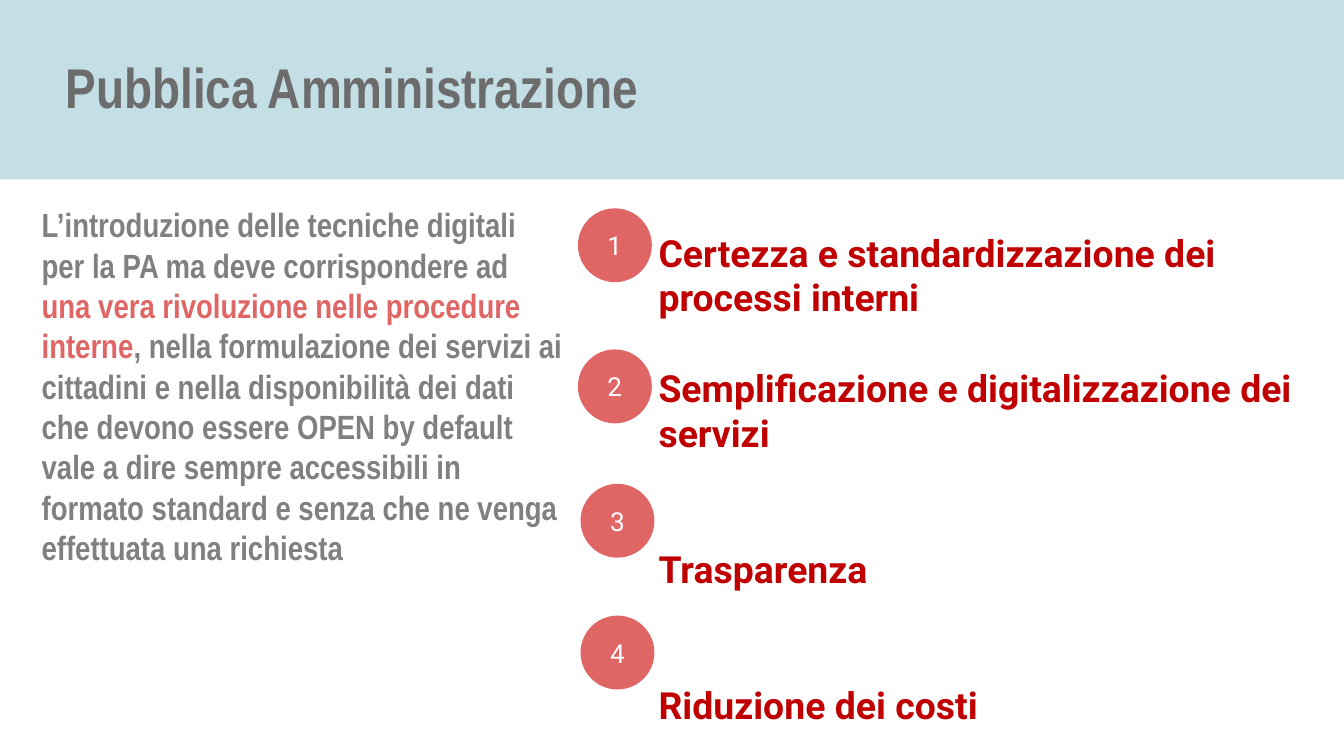
from collections import namedtuple
from dataclasses import dataclass

from lxml import etree
from pptx import Presentation
from pptx.dml.color import RGBColor
from pptx.enum.shapes import MSO_SHAPE
from pptx.enum.text import MSO_ANCHOR, MSO_AUTO_SIZE, PP_ALIGN
from pptx.oxml.ns import qn
from pptx.util import Pt

Box = namedtuple("Box", "left top width height")


@dataclass(frozen=True)
class Theme:
    heading_font: str = "Arial Narrow"
    list_font: str = "Roboto"
    band: str = "C3DEE5"
    heading: str = "6C6C6C"
    body: str = "808080"
    accent: str = "E06666"
    benefit: str = "C00000"
    badge_text: str = "FFFFFF"
    title_size: float = 30
    body_size: float = 18
    benefit_size: float = 20
    badge_size: float = 14


THEME = Theme()
BLANK_LINE = 24.5
BADGE_DIAMETER = 39.6

INTRO = [
    ("L’introduzione delle tecniche digitali per la PA ma deve corrispondere ad ", THEME.body),
    ("una vera rivoluzione nelle procedure interne", THEME.accent),
    (", nella formulazione dei servizi ai cittadini e nella disponibilità dei dati "
     "che devono essere OPEN by default vale a dire sempre accessibili in formato "
     "standard e senza che ne venga effettuata una richiesta", THEME.body),
]
# Each benefit: wording, blank lines above it, left and top of its badge
BENEFITS = [
    ("Certezza e standardizzazione dei processi interni", 0, 309.6, 111.6),
    ("Semplificazione e digitalizzazione dei servizi", 1, 309.6, 187.2),
    ("Trasparenza", 2, 311, 259.2),
    ("Riduzione dei costi", 2, 311, 329.8),
]


def place(shape, box):
    shape.left, shape.top, shape.width, shape.height = map(Pt, box)


def add_run(paragraph, text, font, size, color, bold=True):
    run = paragraph.add_run()
    run.text = text
    run.font.name = font
    run.font.size = Pt(size)
    run.font.bold = bold
    run.font.color.rgb = RGBColor.from_string(color)


def set_frame(frame, anchor, inset_x=7.2, inset_y=7.2):
    frame.word_wrap = True
    frame.auto_size = MSO_AUTO_SIZE.NONE
    frame.vertical_anchor = anchor
    frame.margin_left = frame.margin_right = Pt(inset_x)
    frame.margin_top = frame.margin_bottom = Pt(inset_y)


def format_plain(paragraph, space_before=0):
    """Left-align the paragraph, without bullet or indent."""
    paragraph.alignment = PP_ALIGN.LEFT
    paragraph.space_before = Pt(space_before)
    properties = paragraph._p.get_or_add_pPr()
    properties.set("marL", "0")
    properties.set("indent", "0")
    etree.SubElement(properties, qn("a:buNone"))


def add_solid(slide, preset, box, color):
    shape = slide.shapes.add_shape(preset, *map(Pt, box))
    shape.shadow.inherit = False
    shape.fill.solid()
    shape.fill.fore_color.rgb = RGBColor.from_string(color)
    shape.line.fill.background()
    return shape


def build_header(slide, box):
    band = add_solid(slide, MSO_SHAPE.RECTANGLE, box, THEME.band)
    title = slide.shapes.title
    title.element.addprevious(band.element)
    place(title, Box(box.left + 28, box.top + 20.9, box.width - 49, 45.4))
    set_frame(title.text_frame, MSO_ANCHOR.TOP)
    heading = title.text_frame.paragraphs[0]
    heading.alignment = PP_ALIGN.LEFT
    add_run(heading, "Pubblica Amministrazione", THEME.heading_font,
            THEME.title_size, THEME.heading)


def build_intro(intro, box):
    place(intro, box)
    set_frame(intro.text_frame, MSO_ANCHOR.TOP, inset_y=3.6)
    paragraph = intro.text_frame.paragraphs[0]
    format_plain(paragraph)
    for text, color in INTRO:
        add_run(paragraph, text, THEME.heading_font, THEME.body_size, color)


def add_badge(slide, number, box):
    badge = add_solid(slide, MSO_SHAPE.OVAL, box, THEME.accent)
    set_frame(badge.text_frame, MSO_ANCHOR.MIDDLE)
    paragraph = badge.text_frame.paragraphs[0]
    paragraph.alignment = PP_ALIGN.CENTER
    add_run(paragraph, str(number), THEME.list_font, THEME.badge_size,
            THEME.badge_text, bold=False)


def build_benefits(slide, benefits, box):
    place(benefits, box)
    frame = benefits.text_frame
    set_frame(frame, MSO_ANCHOR.TOP, inset_y=3.6)
    frame.margin_top = Pt(3.6 + BLANK_LINE)
    for number, (text, blank_lines, left, top) in enumerate(BENEFITS, 1):
        paragraph = frame.paragraphs[0] if number == 1 else frame.add_paragraph()
        format_plain(paragraph, blank_lines * BLANK_LINE)
        add_run(paragraph, text, THEME.list_font, THEME.benefit_size, THEME.benefit)
        add_badge(slide, number, Box(left, top, BADGE_DIAMETER, BADGE_DIAMETER))


def main():
    presentation = Presentation()
    presentation.slide_width, presentation.slide_height = Pt(720), Pt(405)
    two_content = presentation.slide_layouts[3]
    slide = presentation.slides.add_slide(two_content)
    _, intro, benefits = slide.placeholders
    build_header(slide, Box(0, 0, 720, 96.2))
    build_intro(intro, Box(15.1, 105.8, 293.8, 290.9))
    build_benefits(slide, benefits, Box(345.6, 95, 374.4, 346.3))
    presentation.save("out.pptx")


if __name__ == "__main__":
    main()
